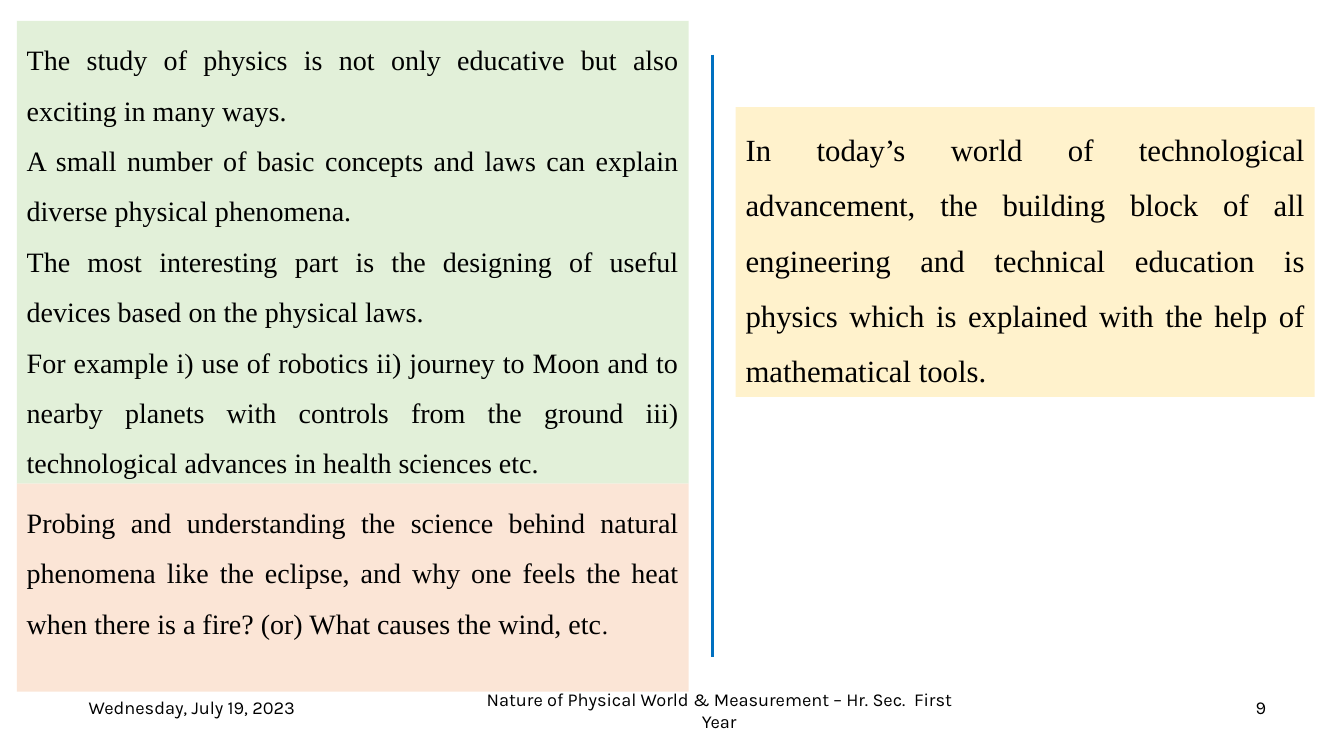
"""Build the slide on why physics is worth studying."""
from dataclasses import dataclass

import pptx
import pptx.util
from pptx.dml.color import RGBColor
from pptx.enum.shapes import MSO_CONNECTOR, MSO_SHAPE
from pptx.enum.text import MSO_ANCHOR, PP_ALIGN
from pptx.oxml.ns import qn
from lxml import etree

Pt = pptx.util.Pt


@dataclass(frozen=True)
class Theme:
    """Colours, fonts and type sizes of the slide."""
    ink: str = "000000"
    green: str = "E2F0D9"
    peach: str = "FBE5D6"
    cream: str = "FFF2CC"
    blue: str = "0070C0"
    body_font: str = "Times New Roman"
    footer_font: str = "Karla"
    body_size: int = 20
    emphasis_size: int = 22
    stop_size: int = 18
    footer_size: int = 13


THEME = Theme()

STUDY_POINTS = [
    "The study of physics is not only educative but also exciting in many ways.",
    "A small number of basic concepts and laws can explain diverse physical phenomena.",
    "The most interesting part is the designing of useful devices based on the physical laws.",
    "For example i) use of robotics ii) journey to Moon and to nearby planets with controls "
    "from the ground iii) technological advances in health sciences etc.",
]
PROBING = [
    "Probing and understanding the science behind natural phenomena like the eclipse, and why "
    "one feels the heat when there is a fire? (or) What causes the wind, etc",
]
TODAY = [
    "In today’s world of technological advancement, the building block of all engineering and "
    "technical education is physics which is explained with the help of mathematical tools.",
]


def style_font(font, name, size):
    """Set the typeface, size and ink colour of a font."""
    font.name = name
    font.size = Pt(size)
    font.color.rgb = RGBColor.from_string(THEME.ink)


def add_panel(page, bounds, fill, texts, size):
    """Add a filled panel of justified paragraphs and return it."""
    panel = page.shapes.add_shape(MSO_SHAPE.RECTANGLE, *map(Pt, bounds))
    panel.shadow.inherit = False
    panel.fill.solid()
    panel.fill.fore_color.rgb = RGBColor.from_string(fill)
    panel.line.fill.background()
    frame = panel.text_frame
    frame.word_wrap = True
    frame.vertical_anchor = MSO_ANCHOR.TOP
    frame.text = "\n".join(texts)
    for para in frame.paragraphs:
        para.alignment = PP_ALIGN.JUSTIFY
        para.line_spacing = 1.5
        style_font(para.font, THEME.body_font, size)
    return panel


def add_full_stop(panel):
    """End the panel's last paragraph with a smaller full stop."""
    span = panel.text_frame.paragraphs[-1].add_run()
    span.text = "."
    span.font.size = Pt(THEME.stop_size)


def add_footer(page, bounds, text):
    """Add a centred footer text."""
    box = page.shapes.add_textbox(*map(Pt, bounds))
    frame = box.text_frame
    frame.word_wrap = True
    frame.vertical_anchor = MSO_ANCHOR.MIDDLE
    para = frame.paragraphs[0]
    para.text = text
    para.alignment = PP_ALIGN.CENTER
    style_font(para.font, THEME.footer_font, THEME.footer_size)


def add_divider(page, x, top, bottom):
    """Add the vertical rule between the columns."""
    divider = page.shapes.add_connector(MSO_CONNECTOR.STRAIGHT, *map(Pt, (x, top, x, bottom)))
    divider.line.color.rgb = RGBColor.from_string(THEME.blue)
    divider.line.width = Pt(2.25)
    etree.SubElement(divider._element.spPr, qn("a:effectLst"))


def main():
    """Build and save the deck."""
    deck = pptx.Presentation()
    deck.slide_width, deck.slide_height = Pt(960), Pt(540)
    page = deck.slides.add_slide(deck.slide_layouts[6])

    add_footer(page, (51, 490.5, 172, 28.8), "Wednesday, July 19, 2023")
    add_footer(page, (885.5, 490.5, 30.5, 28.8), "9")
    add_footer(page, (327.5, 493, 372.5, 28.8),
               "Nature of Physical World & Measurement – Hr. Sec.  First Year")
    add_divider(page, 509, 39, 469.5)

    add_panel(page, (12, 15, 480, 330.5), THEME.green, STUDY_POINTS, THEME.body_size)
    probing = add_panel(page, (12, 345.5, 480, 148.5), THEME.peach, PROBING, THEME.body_size)
    add_full_stop(probing)
    add_panel(page, (525.5, 76.5, 413.5, 207), THEME.cream, TODAY, THEME.emphasis_size)

    deck.save("out.pptx")


if __name__ == "__main__":
    main()
